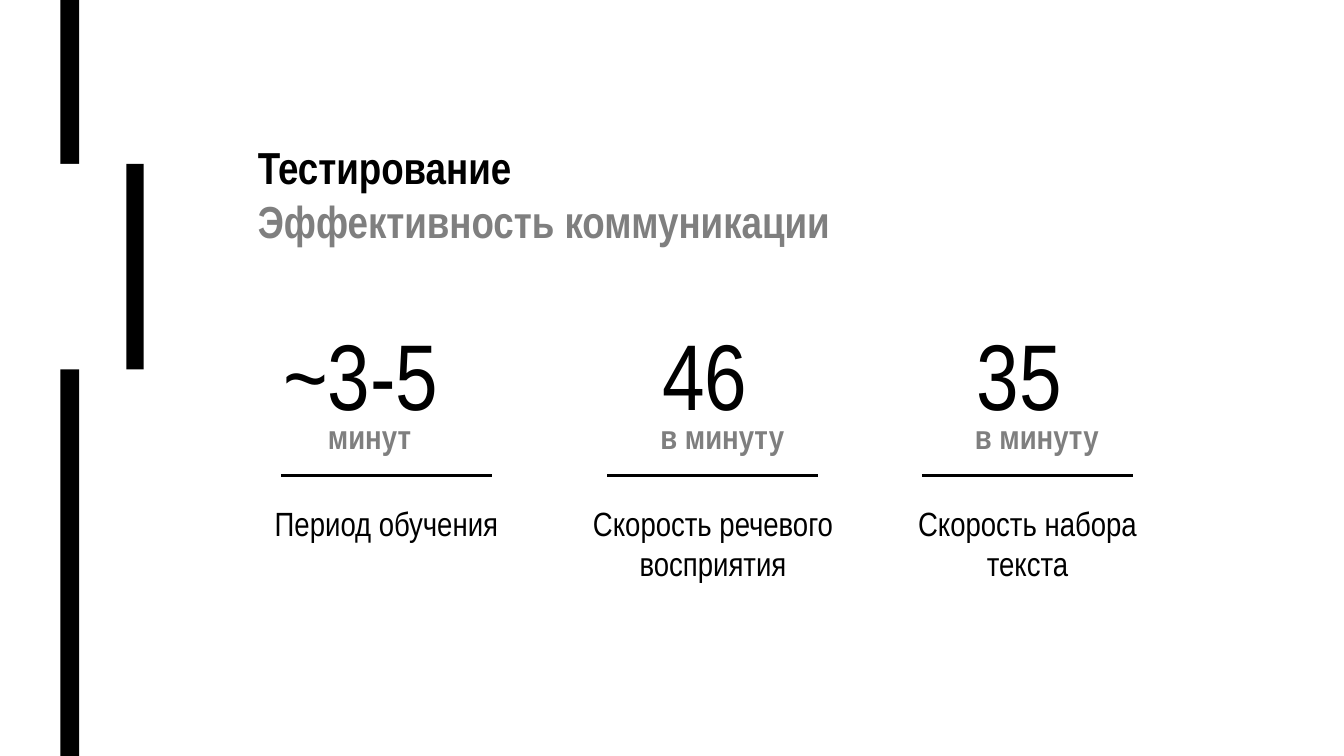
from dataclasses import dataclass

from lxml import etree
from pptx import Presentation
from pptx.dml.color import RGBColor
from pptx.enum.shapes import MSO_CONNECTOR as Connector, MSO_SHAPE as Shape
from pptx.enum.text import PP_ALIGN as Align
from pptx.oxml.ns import qn
from pptx.util import Inches, Pt

FONT = "Arial Narrow"
BLACK, GRAY, WHITE = "000000", "7F7F7F", "FFFFFF"
PAGE_WIDTH = 10
PAGE_HEIGHT = PAGE_WIDTH * 9 / 16
LABEL_TOP, LABEL_WIDTH, LABEL_HEIGHT = 3.69, 2.39, 1.09
FIGURE_TOP, FIGURE_WIDTH, FIGURE_HEIGHT = 2.74, 2.83, 0.66
RULE_TOP, RULE_WIDTH = 3.54, 1.57


@dataclass(frozen=True)
class Line:
    text: str
    size: float
    color: str = BLACK
    bold: bool = False
    align: Align = Align.CENTER
    spacing: float = 1.0
    before: float = 0
    indent: float = 0


@dataclass(frozen=True)
class Metric:
    value: str
    unit: str
    label: str
    label_left: float
    figure_left: float
    rule_left: float
    unit_indent: float


METRICS = [
    Metric("~3-5", "минут", "Период обучения", 1.68, 1.27, 2.09, 0.13),
    Metric("46", "в минуту", "Скорость речевого восприятия", 4.11, 3.83, 4.52, 0.26),
    Metric("35", "в минуту", "Скорость набора текста", 6.45, 6.17, 6.86, 0.26),
]
BARS = [
    (0.94, 1.22, 0.13, 1.53, BLACK),
    (0.45, 0, 0.14, PAGE_HEIGHT, BLACK),
    (0, 1.22, 0.93, 1.53, WHITE),
]


def rgb(color: str) -> RGBColor:
    return RGBColor.from_string(color)


def assign(target, values: dict) -> None:
    for name, value in values.items():
        setattr(target, name, value)


def add_bar(page, left: float, top: float, width: float, height: float, color: str) -> None:
    bar = page.shapes.add_shape(
        Shape.RECTANGLE, Inches(left), Inches(top), Inches(width), Inches(height))
    bar.shadow.inherit = False
    bar.fill.solid()
    bar.fill.fore_color.rgb = rgb(color)
    bar.line.fill.background()


def add_rule(page, left: float) -> None:
    rule = page.shapes.add_connector(
        Connector.STRAIGHT, Inches(left), Inches(RULE_TOP),
        Inches(left + RULE_WIDTH), Inches(RULE_TOP))
    rule.line.color.rgb = rgb(BLACK)
    rule.line.width = Pt(1.5)
    etree.SubElement(rule.element.spPr, qn("a:effectLst"))


def add_text(page, left: float, top: float, width: float, height: float,
             lines: list[Line]) -> None:
    box = page.shapes.add_textbox(Inches(left), Inches(top), Inches(width), Inches(height))
    frame = box.text_frame
    frame.word_wrap = True
    for index, line in enumerate(lines):
        para = frame.add_paragraph() if index else frame.paragraphs[0]
        assign(para, {"alignment": line.align, "line_spacing": line.spacing,
                      "space_before": Pt(line.before)})
        if line.indent:
            para._p.get_or_add_pPr().set("marL", str(Inches(line.indent)))
        span = para.add_run()
        span.text = line.text
        assign(span.font, {"name": FONT, "size": Pt(line.size), "bold": line.bold})
        span.font.color.rgb = rgb(line.color)


def add_metric(page, metric: Metric) -> None:
    add_text(page, metric.label_left, LABEL_TOP, LABEL_WIDTH, LABEL_HEIGHT,
             [Line(metric.label, 18)])
    add_text(page, metric.figure_left, FIGURE_TOP, FIGURE_WIDTH, FIGURE_HEIGHT, [
        Line(metric.value, 50, spacing=0.4),
        Line(metric.unit, 18, GRAY, True, spacing=0.4, before=9, indent=metric.unit_indent),
    ])
    add_rule(page, metric.rule_left)


def main() -> None:
    deck = Presentation()
    assign(deck, {"slide_width": Inches(PAGE_WIDTH), "slide_height": Inches(PAGE_HEIGHT)})
    page = deck.slides.add_slide(deck.slide_layouts[6])
    for bar in BARS:
        add_bar(page, *bar)
    for metric in METRICS:
        add_metric(page, metric)
    add_text(page, 1.82, 0.99, 6.08, 0.83, [
        Line("Тестирование", 24, BLACK, True, Align.LEFT),
        Line("Эффективность коммуникации", 24, GRAY, True, Align.LEFT),
    ])
    deck.save("out.pptx")


if __name__ == "__main__":
    main()
